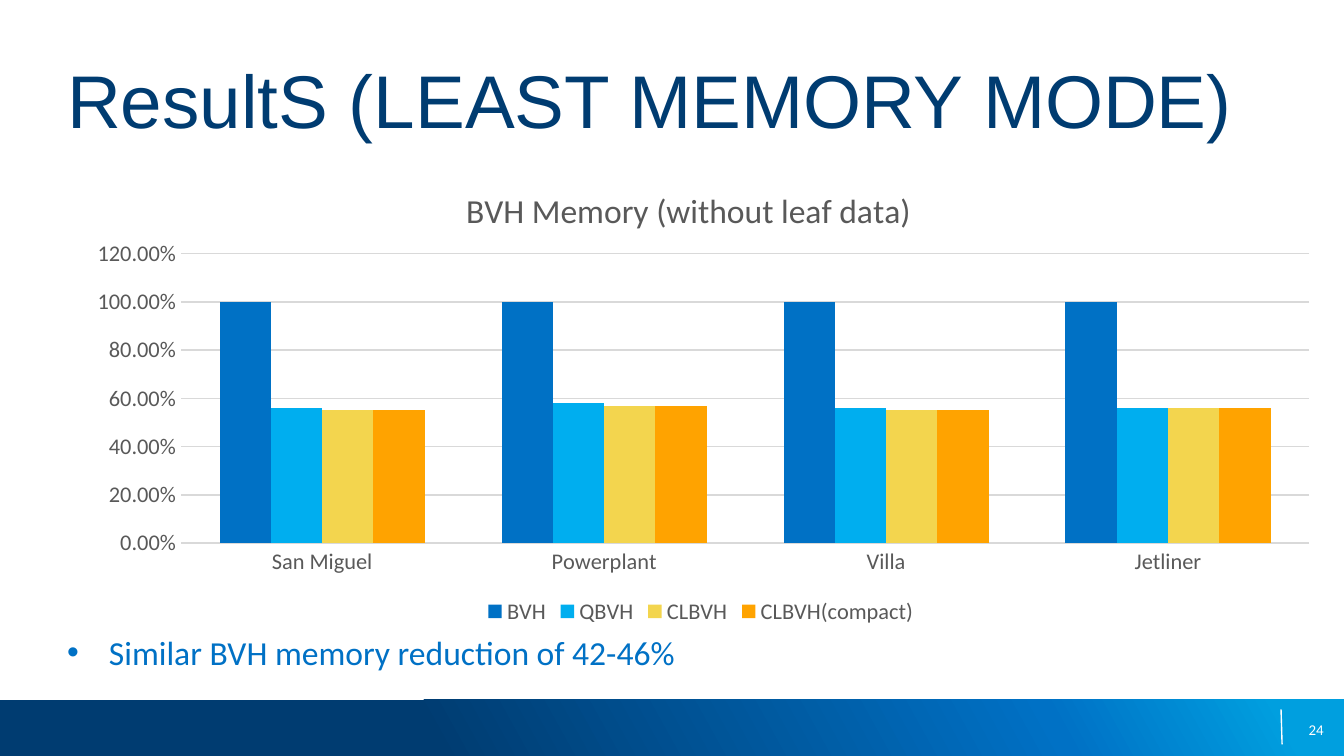
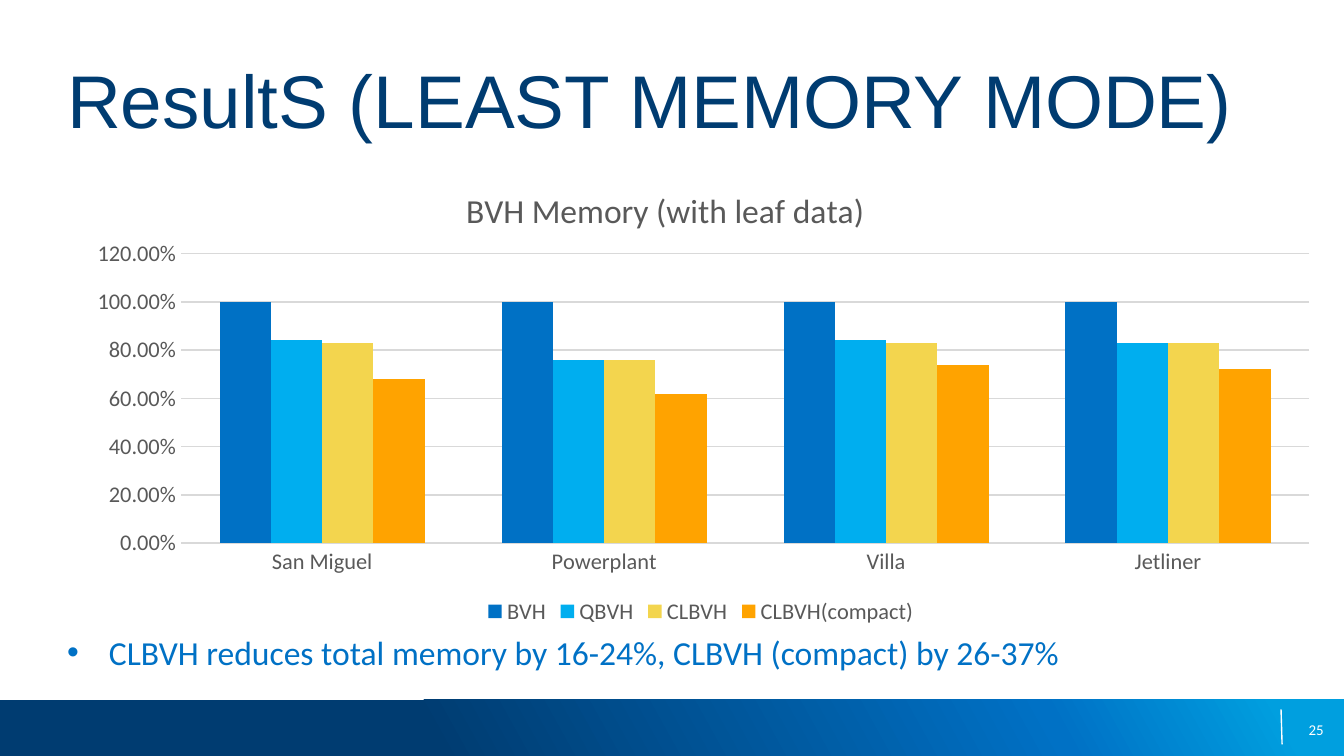
"""Build two result slides comparing BVH memory use in least memory mode."""
from lxml import etree
from pptx import Presentation
from pptx import util as u
from pptx.chart.data import CategoryChartData
from pptx.dml.color import RGBColor
from pptx.enum import chart as charts, shapes, text
from pptx.oxml import parse_xml
from pptx.oxml.ns import nsdecls, qn

COLOURS = {
    "navy": "003C71", "blue": "0071C5", "cyan": "009FDF", "sky": "00AEEF",
    "yellow": "F3D54E", "orange": "FFA300", "grey": "595959",
    "grid": "D9D9D9", "white": "FFFFFF",
}
TITLE = "ResultS (LEAST MEMORY MODE)"
SCENES = ["San Miguel", "Powerplant", "Villa", "Jetliner"]
SERIES = {"BVH": "blue", "QBVH": "sky", "CLBVH": "yellow", "CLBVH(compact)": "orange"}
BAND_STOPS = [(32, "navy"), (78, "blue"), (95, "cyan")]
FIRST_NUMBER = 24
RESULTS = [
    ("BVH Memory (without leaf data)",
     "Similar BVH memory reduction of 42-46%",
     [[1, 1, 1, 1], [0.56, 0.58, 0.56, 0.56],
      [0.55, 0.57, 0.55, 0.56], [0.55, 0.57, 0.55, 0.56]]),
    ("BVH Memory (with leaf data)",
     "CLBVH reduces total memory by 16-24%, CLBVH (compact) by 26-37%",
     [[1, 1, 1, 1], [0.84, 0.76, 0.84, 0.83],
      [0.83, 0.76, 0.83, 0.83], [0.68, 0.62, 0.74, 0.72]]),
]


def add_text(page, words, at, size, colour, font="Calibri", align=text.PP_ALIGN.LEFT,
             anchor=text.MSO_ANCHOR.TOP, top_inset=0, bullet=False):
    box = page.shapes.add_textbox(*[u.Cm(length) for length in at])
    frame = box.text_frame
    frame.word_wrap = True
    frame.vertical_anchor = anchor
    frame.margin_left = frame.margin_right = frame.margin_bottom = 0
    frame.margin_top = u.Cm(top_inset)
    para = frame.paragraphs[0]
    para.alignment = align
    if bullet:
        props = para._p.get_or_add_pPr()
        props.set("marL", str(u.Cm(0.79)))
        props.set("indent", str(-u.Cm(0.79)))
        etree.SubElement(props, qn("a:buFont")).set("typeface", "Arial")
        etree.SubElement(props, qn("a:buChar")).set("char", "•")
    span = para.add_run()
    span.text = words
    span.font.name = font
    span.font.size = u.Pt(size)
    span.font.color.rgb = RGBColor.from_string(COLOURS[colour])


def set_layout(element, index, **fractions):
    for old in element.findall(qn("c:layout")):
        element.remove(old)
    layout = parse_xml(f"<c:layout {nsdecls('c')}><c:manualLayout/></c:layout>")
    if "w" in fractions:
        etree.SubElement(layout[0], qn("c:layoutTarget")).set("val", "inner")
    for side in "xy":
        etree.SubElement(layout[0], qn(f"c:{side}Mode")).set("val", "edge")
    for name, value in fractions.items():
        etree.SubElement(layout[0], qn(f"c:{name}")).set("val", str(value))
    element.insert(index, layout)


deck = Presentation()
deck.slide_width, deck.slide_height = u.Cm(25.4), u.Cm(14.29)

for number, (heading, finding, rows) in enumerate(RESULTS, FIRST_NUMBER):
    page = deck.slides.add_slide(deck.slide_layouts[6])

    band = page.shapes.add_shape(shapes.MSO_SHAPE.RECTANGLE, 0, u.Cm(13.23),
                                 deck.slide_width, u.Cm(1.06))
    band.shadow.inherit = False
    band.line.fill.background()
    band.fill.gradient()
    band.fill.gradient_angle = 29
    stops = band._element.spPr.find(qn("a:gradFill")).find(qn("a:gsLst"))
    for stop in list(stops):
        stops.remove(stop)
    for position, colour in BAND_STOPS:
        stop = etree.SubElement(stops, qn("a:gs"))
        stop.set("pos", str(position * 1000))
        etree.SubElement(stop, qn("a:srgbClr")).set("val", COLOURS[colour])

    divider = page.shapes.add_connector(shapes.MSO_CONNECTOR.STRAIGHT, u.Cm(24.21),
                                        u.Cm(13.41), u.Cm(24.23), u.Cm(14.07))
    divider.line.width = u.Pt(0.75)
    divider.line.color.rgb = RGBColor.from_string(COLOURS["white"])
    etree.SubElement(divider._element.spPr, qn("a:effectLst"))

    data = CategoryChartData(number_format="0.00%")
    data.categories = SCENES
    for name, values in zip(SERIES, rows):
        data.add_series(name, values)
    chart = page.shapes.add_chart(charts.XL_CHART_TYPE.COLUMN_CLUSTERED, u.Cm(1.27),
                                  u.Cm(2.79), u.Cm(23.95), u.Cm(9.12), data).chart
    chart.font.name = "Calibri"
    chart.font.size = u.Pt(12)
    chart.font.color.rgb = RGBColor.from_string(COLOURS["grey"])

    chart.has_title = True
    para = chart.chart_title.text_frame.paragraphs[0]
    span = para.add_run()
    span.text = heading
    span.font.name = "Calibri"
    span.font.size = u.Pt(18)
    span.font.bold = False
    span.font.color.rgb = RGBColor.from_string(COLOURS["grey"])
    set_layout(chart.chart_title._element, 1, x=0.31, y=0.07)
    set_layout(chart._chartSpace.chart.plotArea, 0, x=0.09, y=0.22, w=0.89, h=0.6)

    chart.has_legend = True
    chart.legend.position = charts.XL_LEGEND_POSITION.BOTTOM
    chart.legend.include_in_layout = False

    for axis in (chart.category_axis, chart.value_axis):
        axis.major_tick_mark = axis.minor_tick_mark = charts.XL_TICK_MARK.NONE
        axis.format.line.fill.background()
    scale = chart.value_axis
    scale.minimum_scale, scale.maximum_scale, scale.major_unit = 0, 1.2, 0.2
    scale.tick_labels.number_format = "0.00%"
    scale.tick_labels.number_format_is_linked = False
    scale.major_gridlines.format.line.width = u.Pt(0.75)
    scale.major_gridlines.format.line.color.rgb = RGBColor.from_string(COLOURS["grid"])

    plot = chart.plots[0]
    plot.vary_by_categories = False
    plot.gap_width, plot.overlap = 150, 0
    for series, colour in zip(plot.series, SERIES.values()):
        series.format.fill.solid()
        series.format.fill.fore_color.rgb = RGBColor.from_string(COLOURS[colour])

    add_text(page, str(number), (19.1, 13.41, 5.92, 0.76), 8, "white",
             align=text.PP_ALIGN.RIGHT, anchor=text.MSO_ANCHOR.MIDDLE)
    add_text(page, TITLE, (1.27, 0.86, 22.86, 2.41), 40, "navy", font="Arial", top_inset=0.15)
    add_text(page, finding, (1.27, 11.94, 24.13, 0.94), 18, "blue", bullet=True)

deck.save("out.pptx")
